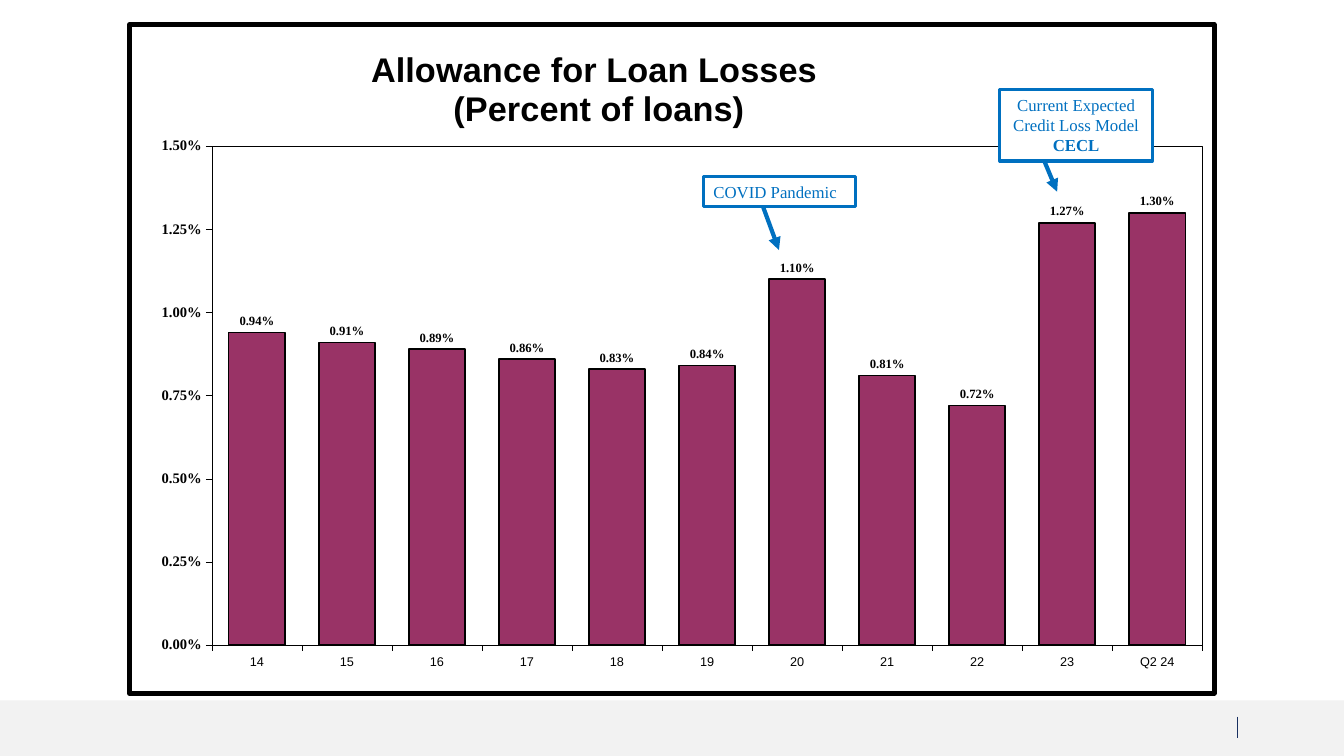
import pptx
import pptx.chart.data
import pptx.dml.color
import pptx.enum.chart
import pptx.enum.shapes
import pptx.enum.text
import pptx.oxml
import pptx.oxml.ns
import pptx.util
from pptx.util import Cm, Pt

# Content
TITLE = ["Allowance for Loan Losses", " (Percent of loans)"]
ALLOWANCE = {
    "14": 0.0094, "15": 0.0091, "16": 0.0089, "17": 0.0086,
    "18": 0.0083, "19": 0.0084, "20": 0.0110, "21": 0.0081,
    "22": 0.0072, "23": 0.0127, "Q2 24": 0.0130,
}
LEFT = pptx.enum.text.PP_ALIGN.LEFT
CENTER = pptx.enum.text.PP_ALIGN.CENTER
# Box (left, top, width, height), arrow (from x, y, to x, y), alignment, runs (text, bold)
CALLOUTS = [
    ((17.73, 4.45, 3.84, 0.76), (19.23, 5.21, 19.63, 6.3), LEFT,
     [("COVID Pandemic", False)]),
    ((25.2, 2.26, 3.84, 1.8), (26.31, 4.04, 26.64, 4.83), CENTER,
     [("Current Expected Credit Loss Model ", False), ("CECL", True)]),
]
COLORS = {"black": "000000", "white": "FFFFFF", "bar": "993366",
          "callout": "0070C0", "footer": "F2F2F2", "navy": "193061"}
SANS, SERIF = "Arial", "Times New Roman"
WIDTH, HEIGHT, FOOTER_TOP = 33.87, 19.05, 17.65


def color(name):
    return pptx.dml.color.RGBColor.from_string(COLORS[name])


def set_font(font, name, size, color_name, bold=False):
    font.name, font.size, font.bold = name, Pt(size), bold
    font.color.rgb = color(color_name)


def set_line(line, color_name, width):
    line.color.rgb = color(color_name)
    line.width = Pt(width)


def chart_xml(body):
    return pptx.oxml.parse_xml(body.replace(
        ">", f' {pptx.oxml.ns.nsdecls("c", "a")}>', 1))


def layout_xml(x, y, width=None, height=None):
    parts = '<c:xMode val="edge"/><c:yMode val="edge"/>'
    sizes = [("x", x), ("y", y), ("w", width), ("h", height)]
    parts += "".join(f'<c:{tag} val="{value}"/>' for tag, value in sizes if value is not None)
    target = '<c:layoutTarget val="inner"/>' if width else ""
    return chart_xml(f"<c:layout><c:manualLayout>{target}{parts}</c:manualLayout></c:layout>")


def frame_xml(width):
    return chart_xml(
        f'<c:spPr><a:solidFill><a:srgbClr val="{COLORS["white"]}"/></a:solidFill>'
        f'<a:ln w="{Pt(width)}"><a:solidFill><a:srgbClr val="{COLORS["black"]}"/>'
        "</a:solidFill></a:ln></c:spPr>")


def drop_layout(element):
    for layout in element.findall(pptx.oxml.ns.qn("c:layout")):
        element.remove(layout)


def add_line(slide, ends, color_name, width, arrow=False):
    connector = slide.shapes.add_connector(
        pptx.enum.shapes.MSO_CONNECTOR.STRAIGHT, *map(Cm, ends))
    set_line(connector.line, color_name, width)
    properties = connector._element.spPr
    if arrow:
        properties.find(pptx.oxml.ns.qn("a:ln")).append(pptx.oxml.parse_xml(
            f'<a:tailEnd {pptx.oxml.ns.nsdecls("a")} type="triangle"/>'))
    properties.append(pptx.oxml.parse_xml(
        f'<a:effectLst {pptx.oxml.ns.nsdecls("a")}/>'))


def add_footer(slide):
    band = slide.shapes.add_shape(
        pptx.enum.shapes.MSO_SHAPE.RECTANGLE,
        Cm(0), Cm(FOOTER_TOP), Cm(WIDTH), Cm(HEIGHT - FOOTER_TOP))
    band.shadow.inherit = False
    band.fill.solid()
    band.fill.fore_color.rgb = color("footer")
    band.line.fill.background()
    add_line(slide, (31.19, 18.06, 31.19, 18.59), "navy", 0.5)


def add_allowance_chart(slide):
    data = pptx.chart.data.CategoryChartData(number_format="0.00%")
    data.categories = list(ALLOWANCE)
    data.add_series("Series 1", list(ALLOWANCE.values()))
    chart = slide.shapes.add_chart(
        pptx.enum.chart.XL_CHART_TYPE.COLUMN_CLUSTERED,
        Cm(3.2), Cm(0.56), Cm(27.46), Cm(16.97), data).chart
    set_font(chart.font, SANS, 9.1, "black")
    chart.has_legend = False

    # Title
    title = chart.chart_title
    frame = title.text_frame
    for index, text in enumerate(TITLE):
        paragraph = frame.add_paragraph() if index else frame.paragraphs[0]
        run = paragraph.add_run()
        run.text = text
        set_font(run.font, SANS, 24.6, "black", True)
    title_element = title._element
    drop_layout(title_element)
    title_element.find(pptx.oxml.ns.qn("c:tx")).addnext(layout_xml(0.22, 0.033))

    # Axes
    value_axis, category_axis = chart.value_axis, chart.category_axis
    value_axis.minimum_scale, value_axis.maximum_scale = 0, 0.015
    value_axis.major_unit = 0.0025
    value_axis.has_major_gridlines = False
    value_axis.tick_labels.number_format = "0.00%"
    value_axis.tick_labels.number_format_is_linked = False
    set_font(value_axis.tick_labels.font, SERIF, 10.5, "black", True)
    set_font(category_axis.tick_labels.font, SANS, 9.1, "black")
    for axis in (value_axis, category_axis):
        axis.major_tick_mark = pptx.enum.chart.XL_TICK_MARK.OUTSIDE
        axis.minor_tick_mark = pptx.enum.chart.XL_TICK_MARK.NONE
        set_line(axis.format.line, "black", 0.28)

    # Columns and their labels
    plot = chart.plots[0]
    plot.vary_by_categories = False
    plot.gap_width, plot.overlap = 60, 90
    series = plot.series[0]
    series.format.fill.solid()
    series.format.fill.fore_color.rgb = color("bar")
    set_line(series.format.line, "black", 1.13)
    labels = series.data_labels
    labels.show_value = True
    labels.number_format = "0.00%"
    labels.number_format_is_linked = False
    labels.position = pptx.enum.chart.XL_LABEL_POSITION.OUTSIDE_END
    set_font(labels.font, SERIF, 9.1, "black", True)

    # Plot placement and borders
    chart_element = chart._chartSpace.chart
    plot_area = chart_element.plotArea
    drop_layout(plot_area)
    plot_area.insert(0, layout_xml(0.076, 0.182, 0.913, 0.746))
    plot_area.append(frame_xml(0.28))
    chart_element.addnext(frame_xml(3.4))


def add_callout(slide, box, alignment, runs):
    shape = slide.shapes.add_textbox(*map(Cm, box))
    shape.fill.solid()
    shape.fill.fore_color.rgb = color("white")
    set_line(shape.line, "callout", 2.25)
    frame = shape.text_frame
    frame.word_wrap = True
    frame.auto_size = pptx.enum.text.MSO_AUTO_SIZE.SHAPE_TO_FIT_TEXT
    paragraph = frame.paragraphs[0]
    paragraph.alignment = alignment
    for text, bold in runs:
        run = paragraph.add_run()
        run.text = text
        set_font(run.font, SERIF, 12, "callout", bold)


def main():
    presentation = pptx.Presentation()
    presentation.slide_width, presentation.slide_height = Cm(WIDTH), Cm(HEIGHT)
    slide = presentation.slides.add_slide(presentation.slide_layouts[6])
    add_footer(slide)
    add_allowance_chart(slide)
    for box, arrow, alignment, runs in CALLOUTS:
        add_line(slide, arrow, "callout", 3, arrow=True)
        add_callout(slide, box, alignment, runs)
    presentation.save("out.pptx")


if __name__ == "__main__":
    main()
